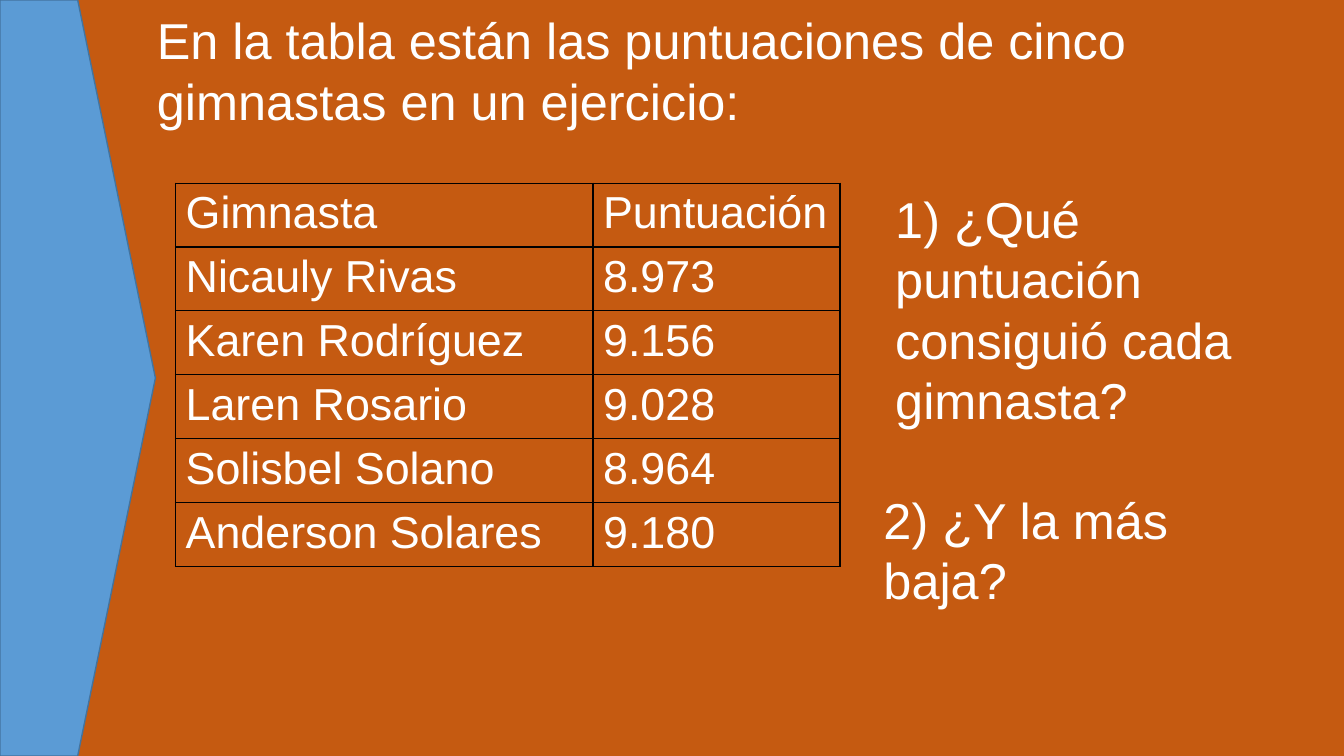
from dataclasses import dataclass

from lxml import etree
from pptx import Presentation
from pptx.dml.color import RGBColor
from pptx.enum.shapes import MSO_SHAPE
from pptx.enum.text import MSO_AUTO_SIZE
from pptx.oxml.ns import qn
from pptx.util import Emu, Inches, Pt

PENTAGON = MSO_SHAPE.PENTAGON
GROW_TO_TEXT = MSO_AUTO_SIZE.SHAPE_TO_FIT_TEXT

# The slide is a grid of 16 columns by 9 rows of square cells
SLIDE_WIDTH, SLIDE_HEIGHT = Inches(13.33), Inches(7.5)
GRID_COLUMNS, GRID_ROWS = 16, 9

FONT = "Arial"
ORANGE, BLUE, DARK_BLUE = "C55A11", "5B9BD5", "43739E"
WHITE, BLACK = "FFFFFF", "000000"


@dataclass(frozen=True)
class Box:
    column: float
    row: float
    columns: float
    rows: float

    def placed(self) -> tuple:
        return across(self.column), down(self.row), across(self.columns), down(self.rows)


@dataclass(frozen=True)
class TextBlock:
    text: str
    box: Box


@dataclass(frozen=True)
class Score:
    gymnast: str
    points: str


ARROW_BOX = Box(0, 0, 1.85, GRID_ROWS)
TEXT_BLOCKS = [
    TextBlock("En la tabla están las puntuaciones de cinco gimnastas en un ejercicio:",
              Box(1.75, 0.05, 14.16, 1.57)),
    TextBlock("1) ¿Qué puntuación consiguió cada gimnasta?", Box(10.54, 2.18, 5.22, 3.02)),
    TextBlock("2) ¿Y la más baja?", Box(10.4, 5.76, 4.94, 1.57)),
]
TABLE_BOX = Box(2.09, 2.18, 7.91, 4.56)
TABLE_COLUMNS = (4.97, 2.94)
SCORES = [
    Score("Gimnasta", "Puntuación"),
    Score("Nicauly Rivas", "8.973"),
    Score("Karen Rodríguez", "9.156"),
    Score("Laren Rosario", "9.028"),
    Score("Solisbel Solano", "8.964"),
    Score("Anderson Solares", "9.180"),
]


def across(columns: float) -> Emu:
    return Emu(round(SLIDE_WIDTH * columns / GRID_COLUMNS))


def down(rows: float) -> Emu:
    return Emu(round(SLIDE_HEIGHT * rows / GRID_ROWS))


def color(hex_value: str) -> RGBColor:
    return RGBColor.from_string(hex_value)


def write(text_frame, text: str, *, size: float, font: str = FONT, fill: str = WHITE) -> None:
    run = text_frame.paragraphs[0].add_run()
    run.text = text
    run.font.name = font
    run.font.size = Pt(size)
    run.font.color.rgb = color(fill)


def add_arrow(slide, box: Box) -> None:
    shape = slide.shapes.add_shape(PENTAGON, *box.placed())
    shape.shadow.inherit = False
    shape.fill.solid()
    shape.fill.fore_color.rgb = color(BLUE)
    shape.line.color.rgb = color(DARK_BLUE)
    shape.line.width = Pt(1)


def add_text(slide, block: TextBlock) -> None:
    text_frame = slide.shapes.add_textbox(*block.box.placed()).text_frame
    text_frame.word_wrap = True
    text_frame.auto_size = GROW_TO_TEXT
    write(text_frame, block.text, size=36)


def add_borders(cell, line_color: str, width: float) -> None:
    properties = cell._tc.get_or_add_tcPr()
    for position, side in enumerate(("a:lnL", "a:lnR", "a:lnT", "a:lnB")):
        line = etree.Element(qn(side), w=str(Pt(width)))
        fill = etree.SubElement(line, qn("a:solidFill"))
        etree.SubElement(fill, qn("a:srgbClr"), val=line_color)
        properties.insert(position, line)


def add_score_table(slide, scores: list[Score], box: Box) -> None:
    table = slide.shapes.add_table(len(scores), len(TABLE_COLUMNS), *box.placed()).table
    table.first_row = False
    table.horz_banding = False
    for column, columns in zip(table.columns, TABLE_COLUMNS):
        column.width = across(columns)
    for row, score in zip(table.rows, scores):
        row.height = down(box.rows / len(scores))
        for cell, text in zip(row.cells, (score.gymnast, score.points)):
            cell.fill.background()
            add_borders(cell, BLACK, 1)
            write(cell.text_frame, text, size=32)


def main() -> None:
    presentation = Presentation()
    presentation.slide_width, presentation.slide_height = SLIDE_WIDTH, SLIDE_HEIGHT
    slide = presentation.slides.add_slide(presentation.slide_layouts[6])

    # Background and side arrow
    slide.background.fill.solid()
    slide.background.fill.fore_color.rgb = color(ORANGE)
    add_arrow(slide, ARROW_BOX)

    # Heading, questions and scores
    for block in TEXT_BLOCKS:
        add_text(slide, block)
    add_score_table(slide, SCORES, TABLE_BOX)

    presentation.save("out.pptx")


if __name__ == "__main__":
    main()
